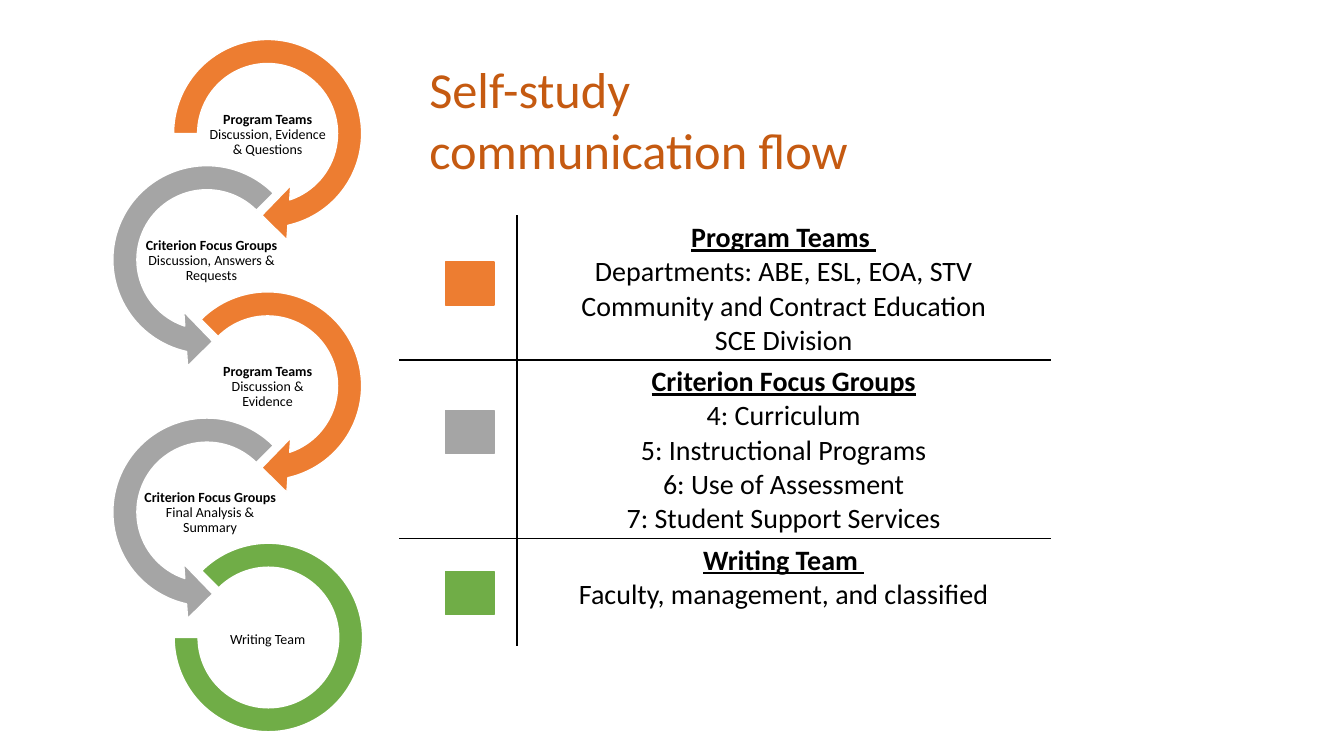
from lxml import etree
from pptx import Presentation
from pptx.dml.color import RGBColor
from pptx.enum.shapes import MSO_SHAPE
from pptx.enum.text import MSO_ANCHOR, PP_ALIGN
from pptx.oxml.ns import qn
from pptx.util import Cm, Pt

RIGHT_ARROW = MSO_SHAPE.CIRCULAR_ARROW
LEFT_ARROW = MSO_SHAPE.LEFT_CIRCULAR_ARROW
ARC = MSO_SHAPE.BLOCK_ARC
RECTANGLE = MSO_SHAPE.RECTANGLE
MIDDLE = MSO_ANCHOR.MIDDLE
CENTER, LEFT = PP_ALIGN.CENTER, PP_ALIGN.LEFT

FONT = "Calibri"
ORANGE, GRAY, GREEN = "ED7D31", "A5A5A5", "70AD47"
TITLE_COLOR, BLACK, WHITE = "C55A11", "000000", "FFFFFF"

# Flow geometry in centimetres
FLOW_TOP, FLOW_STEP, RING_SIZE = 0.61, 3.18, 5.51
RING_LEFT = {RIGHT_ARROW: 3.99, LEFT_ARROW: 2.46, ARC: 4.39}
ARC_SIZE, ARC_DROP = 4.75, 0.36
LABEL_DROP, LABEL_HEIGHT = 2.01, 1.55

# Ring shape, colour, last adjustments, label left and width, heading, detail
FLOW = [
    (RIGHT_ARROW, ORANGE, (0.11, 11.42, 45, 108, 0.125), 5.21, 3.07,
     "Program Teams ", "Discussion, Evidence & Questions"),
    (LEFT_ARROW, GRAY, (0.11, 11.42, 63, 189, 0.125), 3.45, 3.76,
     "Criterion Focus Groups ", "Discussion, Answers & Requests"),
    (RIGHT_ARROW, ORANGE, (0.11, 11.42, 45, 135, 0.125), 5.21, 3.07,
     "Program Teams ", "Discussion & Evidence"),
    (LEFT_ARROW, GRAY, (0.11, 11.42, 63, 189, 0.125), 3.48, 3.63,
     "Criterion Focus Groups ", "Final Analysis & Summary"),
    (ARC, GREEN, (135, 108, 0.127), 5.21, 3.07, "", "Writing Team"),
]

# Row height, swatch top, swatch colour, text lines
LEGEND = [
    (3.63, 6.6, ORANGE,
     ["Program Teams ",
      "Departments: ABE, ESL, EOA, STV\vCommunity and Contract Education",
      "SCE Division"]),
    (4.5, 10.34, GRAY,
     ["Criterion Focus Groups", "4: Curriculum", "5: Instructional Programs",
      "6: Use of Assessment", "7: Student Support Services"]),
    (2.72, 14.4, GREEN,
     ["Writing Team ", "Faculty, management, and classified"]),
]


def color(value):
    return RGBColor.from_string(value)


def style_font(font, size, value=BLACK, bold=False, underline=False):
    font.name = FONT
    font.size = Pt(size)
    font.color.rgb = color(value)
    font.bold = bold
    font.underline = underline


def add_filled_shape(slide, kind, left, top, width, height, fill, line):
    shape = slide.shapes.add_shape(
        kind, Cm(left), Cm(top), Cm(width), Cm(height))
    shape.shadow.inherit = False
    shape.fill.solid()
    shape.fill.fore_color.rgb = color(fill)
    shape.line.color.rgb = color(line)
    shape.line.width = Pt(1)
    return shape


def add_text_box(slide, left, top, width, height):
    box = slide.shapes.add_textbox(Cm(left), Cm(top), Cm(width), Cm(height))
    box.text_frame.word_wrap = True
    return box.text_frame


def add_ring(slide, kind, fill, adjustments, top):
    size = RING_SIZE
    if kind == ARC:
        size, top = ARC_SIZE, top + ARC_DROP
    ring = add_filled_shape(
        slide, kind, RING_LEFT[kind], top, size, size, fill, WHITE)
    for index, value in enumerate(adjustments):
        ring.adjustments[index] = value


def add_label(slide, left, top, width, heading, detail):
    frame = add_text_box(slide, left, top, width, LABEL_HEIGHT)
    frame.margin_left = frame.margin_right = Cm(0.03)
    frame.margin_top = frame.margin_bottom = Cm(0.03)
    frame.vertical_anchor = MIDDLE
    paragraph = frame.paragraphs[0]
    paragraph.alignment = CENTER
    paragraph.line_spacing = 0.9
    for text, bold in ((heading, True), (detail, False)):
        if text:
            run = paragraph.add_run()
            run.text = text
            style_font(run.font, 10, bold=bold)


def add_title(slide):
    frame = add_text_box(slide, 10.57, 1.35, 12.75, 3.33)
    frame.text = "Self-study communication flow"
    paragraph = frame.paragraphs[0]
    paragraph.alignment = LEFT
    style_font(paragraph.runs[0].font, 36, TITLE_COLOR)


def set_borders(cell, sides):
    """Draw black borders; sides are given in the order L, R, T, B."""
    properties = cell._tc.get_or_add_tcPr()
    for index, side in enumerate(sides):
        line = etree.Element(qn(f"a:ln{side}"), w=str(Pt(1)))
        fill = etree.SubElement(line, qn("a:solidFill"))
        etree.SubElement(fill, qn("a:srgbClr"), val=BLACK)
        properties.insert(index, line)


def fill_legend_cell(cell, lines):
    cell.margin_bottom = Cm(0.05)
    cell.text_frame.text = "\n".join(lines)
    for index, paragraph in enumerate(cell.text_frame.paragraphs):
        paragraph.alignment = CENTER
        for run in paragraph.runs:
            style_font(run.font, 20, bold=index == 0, underline=index == 0)


def add_legend(slide):
    heights = [row[0] for row in LEGEND]
    table = slide.shapes.add_table(
        len(LEGEND), 2, Cm(10.08), Cm(5.44), Cm(16.39), Cm(sum(heights))).table
    table.first_row = table.horz_banding = False
    table.columns[0].width, table.columns[1].width = Cm(2.95), Cm(13.44)
    last = len(LEGEND) - 1
    for index, (height, swatch_top, fill, lines) in enumerate(LEGEND):
        table.rows[index].height = Cm(height)
        fill_legend_cell(table.cell(index, 1), lines)
        rules = ("T" if index > 0 else "") + ("B" if index < last else "")
        for column, side in enumerate("RL"):
            cell = table.cell(index, column)
            cell.fill.background()
            set_borders(cell, side + rules)
        add_filled_shape(
            slide, RECTANGLE, 11.23, swatch_top, 1.22, 1.09, fill, fill)


def main():
    presentation = Presentation()
    presentation.slide_width = Cm(33.87)
    presentation.slide_height = Cm(19.05)
    slide = presentation.slides.add_slide(presentation.slide_layouts[6])

    # Communication flow
    for index, step in enumerate(FLOW):
        kind, fill, adjustments, left, width, heading, detail = step
        top = FLOW_TOP + index * FLOW_STEP
        add_ring(slide, kind, fill, adjustments, top)
        add_label(slide, left, top + LABEL_DROP, width, heading, detail)

    # Title and legend
    add_title(slide)
    add_legend(slide)
    presentation.save("out.pptx")


if __name__ == "__main__":
    main()
